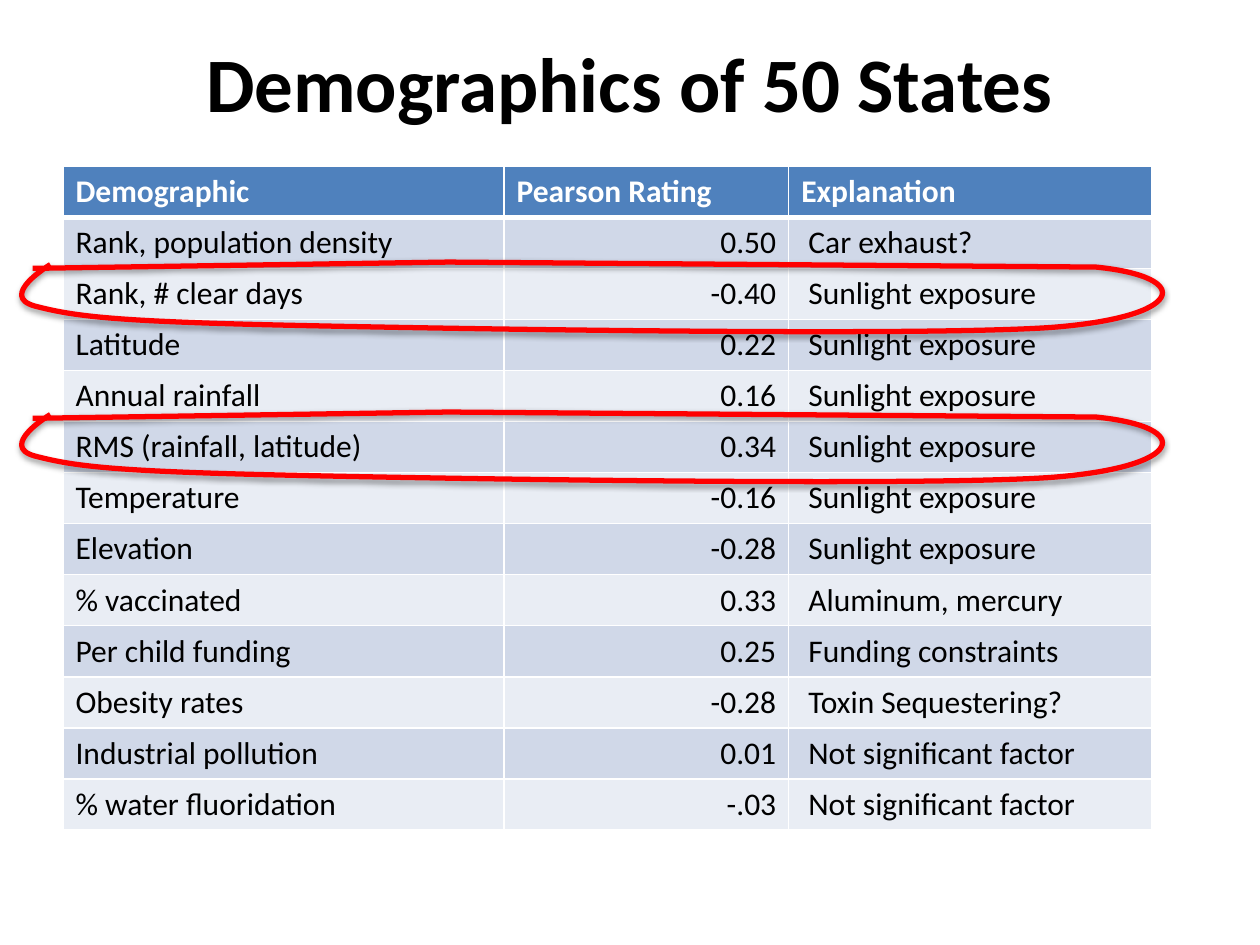
from lxml import etree
from pptx import Presentation
from pptx.dml.color import RGBColor
from pptx.enum.text import MSO_ANCHOR, PP_ALIGN
from pptx.oxml.ns import qn
from pptx.util import Inches, Pt

LEFT, CENTER, RIGHT = PP_ALIGN.LEFT, PP_ALIGN.CENTER, PP_ALIGN.RIGHT
MIDDLE = MSO_ANCHOR.MIDDLE
COLORS = {
    "black": "000000",
    "white": "FFFFFF",
    "header": "4F81BD",
    "odd": "D0D8E8",
    "even": "E9EDF4",
    "ring": "FF0000",
}
FORMATS = {
    "title": {"name": "Calibri", "size": Pt(44), "bold": True},
    "header": {"name": "Calibri", "size": Pt(18), "bold": True},
    "body": {"name": "Calibri", "size": Pt(18), "bold": False},
}
ROWS = [
    ("Demographic", "Pearson Rating", "Explanation"),
    ("Rank, population density", "0.50", " Car exhaust?"),
    ("Rank, # clear days", "-0.40", " Sunlight exposure"),
    ("Latitude", "0.22", " Sunlight exposure"),
    ("Annual rainfall", "0.16", " Sunlight exposure"),
    ("RMS (rainfall, latitude)", "0.34", " Sunlight exposure"),
    ("Temperature", "-0.16", " Sunlight exposure"),
    ("Elevation", "-0.28", " Sunlight exposure"),
    ("% vaccinated", "0.33", " Aluminum, mercury"),
    ("Per child funding", "0.25", " Funding constraints"),
    ("Obesity rates", "-0.28", " Toxin Sequestering?"),
    ("Industrial pollution", "0.01", " Not significant factor"),
    ("% water fluoridation", "-.03", " Not significant factor"),
]
COLUMN_WIDTHS = [3.5, 2.26, 2.88]
TABLE_HEIGHT = 5.27
RING_LEFT, RING_WIDTH, RING_HEIGHT = 0.17, 9.06, 0.55
RING_TOPS = [2.08, 3.27]
RING_SEGMENTS = [
    ("a:moveTo", [(0.26, 0.05)]),
    ("a:lnTo", [(3.56, 0)]),
    ("a:lnTo", [(8.7, 0.04)]),
    ("a:cubicBezTo", [(9.49, 0.12), (9.41, 0.44), (8.33, 0.52)]),
    ("a:cubicBezTo", [(7.26, 0.59), (3.57, 0.53), (2.23, 0.5)]),
    ("a:cubicBezTo", [(0.89, 0.47), (0.59, 0.43), (0.28, 0.35)]),
    ("a:cubicBezTo", [(-0.02, 0.27), (0.4, 0.02), (0.4, 0.02)]),
]


def write_text(text_frame, text, style, color, alignment):
    paragraph = text_frame.paragraphs[0]
    paragraph.alignment = alignment
    run = paragraph.add_run()
    run.text = text
    for attribute, value in FORMATS[style].items():
        setattr(run.font, attribute, value)
    run.font.color.rgb = RGBColor.from_string(COLORS[color])


def add_borders(cell, widths):
    properties = cell._tc.get_or_add_tcPr()
    for position, (side, width) in enumerate(widths.items()):
        border = etree.Element(qn(f"a:{side}"), w=str(Pt(width)))
        fill = etree.SubElement(border, qn("a:solidFill"))
        etree.SubElement(fill, qn("a:srgbClr"), val=COLORS["white"])
        properties.insert(position, border)


presentation = Presentation()
presentation.slide_width = Inches(10)
presentation.slide_height = Inches(7.5)
slide = presentation.slides.add_slide(presentation.slide_layouts[6])

title = slide.shapes.add_textbox(Inches(0.5), Inches(0.02), Inches(9), Inches(1.25))
title.text_frame.word_wrap = True
title.text_frame.vertical_anchor = MIDDLE
write_text(title.text_frame, "Demographics of 50 States", "title", "black", CENTER)

table = slide.shapes.add_table(
    len(ROWS), len(COLUMN_WIDTHS), Inches(0.5), Inches(1.32),
    Inches(sum(COLUMN_WIDTHS)), Inches(TABLE_HEIGHT),
).table
for column, width in zip(table.columns, COLUMN_WIDTHS):
    column.width = Inches(width)
for row_index, values in enumerate(ROWS):
    table.rows[row_index].height = Inches(TABLE_HEIGHT / len(ROWS))
    is_header = row_index == 0
    fill = "header" if is_header else "odd" if row_index % 2 else "even"
    top_width = 3 if row_index == 1 else 1
    bottom_width = 3 if is_header else 1
    for column_index, text in enumerate(values):
        cell = table.cell(row_index, column_index)
        cell.fill.solid()
        cell.fill.fore_color.rgb = RGBColor.from_string(COLORS[fill])
        add_borders(cell, {"lnL": 1, "lnR": 1, "lnT": top_width, "lnB": bottom_width})
        write_text(
            cell.text_frame, text,
            "header" if is_header else "body",
            "white" if is_header else "black",
            RIGHT if column_index == 1 and not is_header else LEFT,
        )

for top in RING_TOPS:
    builder = slide.shapes.build_freeform(Inches(RING_LEFT), Inches(top))
    corner = (Inches(RING_LEFT + RING_WIDTH), Inches(top + RING_HEIGHT))
    builder.add_line_segments([corner], close=False)
    ring = builder.convert_to_shape()
    outline = ring.element.spPr.find(".//" + qn("a:path"))
    for segment in list(outline):
        outline.remove(segment)
    for command, points in RING_SEGMENTS:
        segment = etree.SubElement(outline, qn(command))
        for x, y in points:
            etree.SubElement(
                segment, qn("a:pt"), x=str(Inches(x - RING_LEFT)), y=str(Inches(y))
            )
    ring.fill.background()
    ring.line.color.rgb = RGBColor.from_string(COLORS["ring"])
    ring.line.width = Pt(3)
    ring.shadow.inherit = False
    effects = ring.element.spPr.find(qn("a:effectLst"))
    shadow = etree.SubElement(
        effects, qn("a:outerShdw"), blurRad=str(Pt(3.1)), dist=str(Pt(1.6)),
        dir="5400000", rotWithShape="0",
    )
    shadow_color = etree.SubElement(shadow, qn("a:srgbClr"), val=COLORS["black"])
    etree.SubElement(shadow_color, qn("a:alpha"), val="38000")

presentation.save("out.pptx")
